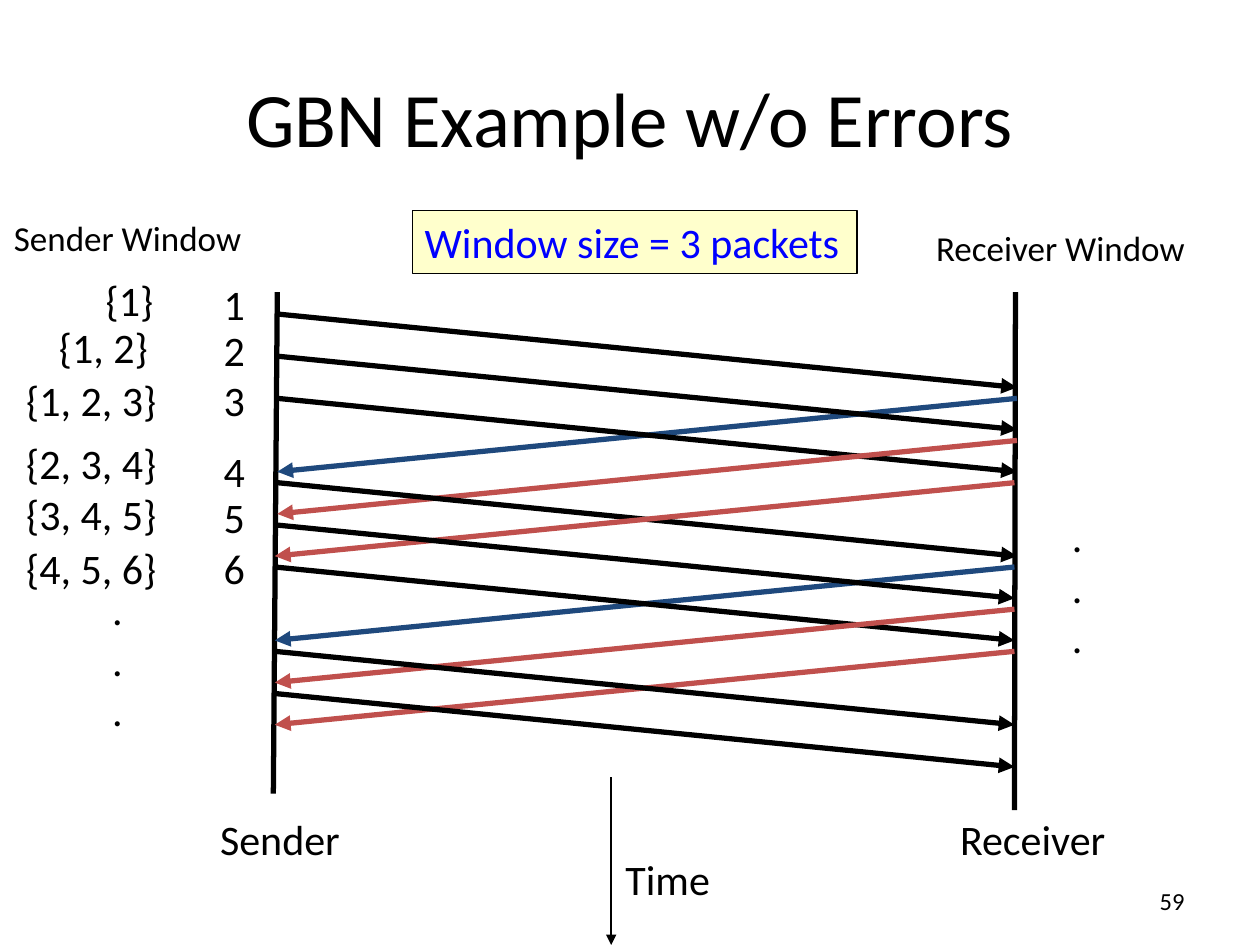
from lxml import etree
from pptx import Presentation
from pptx.dml.color import RGBColor
from pptx.enum import shapes, text
from pptx.oxml import ns
from pptx.util import Cm, Pt

BLACK, ACK_BLUE, ACK_RED = "000000", "1F497D", "C0504D"


def add_label(left, top, width, height, content, size=24, color=BLACK,
              align=text.PP_ALIGN.LEFT, inset=0.25):
    label = slide.shapes.add_textbox(Cm(left), Cm(top), Cm(width), Cm(height))
    frame = label.text_frame
    frame.text = content
    frame.word_wrap = False
    frame.vertical_anchor = text.MSO_ANCHOR.MIDDLE
    frame.margin_left = frame.margin_right = Cm(inset)
    frame.margin_top = frame.margin_bottom = Cm(inset / 2)
    for paragraph in frame.paragraphs:
        paragraph.alignment = align
        paragraph.font.name = "Calibri"
        paragraph.font.size = Pt(size)
        paragraph.font.color.rgb = RGBColor.from_string(color)
    return label


def add_line(x1, y1, x2, y2, color=BLACK, width=3, arrow=True):
    line = slide.shapes.add_connector(
        shapes.MSO_CONNECTOR.STRAIGHT, Cm(x1), Cm(y1), Cm(x2), Cm(y2))
    line.line.color.rgb = RGBColor.from_string(color)
    line.line.width = Pt(width)
    if arrow:
        etree.SubElement(line.line._get_or_add_ln(), ns.qn("a:tailEnd"), type="triangle")
    etree.SubElement(line._element.spPr, ns.qn("a:effectLst"))


presentation = Presentation()
presentation.slide_width, presentation.slide_height = Cm(25.4), Cm(19.05)
slide = presentation.slides.add_slide(presentation.slide_layouts[5])

# Title
title = slide.shapes.title
title.left, title.top, title.width, title.height = Cm(1.27), Cm(0.76), Cm(22.86), Cm(3.18)
title.text_frame.text = "GBN Example w/o Errors"
title.text_frame.vertical_anchor = text.MSO_ANCHOR.MIDDLE
paragraph = title.text_frame.paragraphs[0]
paragraph.alignment = text.PP_ALIGN.CENTER
paragraph.font.name = "Calibri"
paragraph.font.size = Pt(44)
paragraph.font.color.rgb = RGBColor.from_string(BLACK)

# Time axis
add_line(12.32, 15.67, 12.32, 19.05, width=1)
add_label(12.34, 17.07, 2.24, 1.27, "Time", align=text.PP_ALIGN.CENTER)

# Window size box
window_size = add_label(8.31, 4.24, 8.97, 1.27, "Window size = 3 packets", color="0000FF")
window_size.fill.solid()
window_size.fill.fore_color.rgb = RGBColor.from_string("FFFFCC")
window_size.line.color.rgb = RGBColor.from_string(BLACK)
window_size.line.width = Pt(0.75)

# Sender and receiver timelines
add_line(5.59, 5.89, 5.51, 16, arrow=False)
add_line(20.47, 5.89, 20.45, 16.33, arrow=False)
add_label(4.17, 16.28, 2.95, 1.27, "Sender", align=text.PP_ALIGN.CENTER)
add_label(19.08, 16.28, 3.48, 1.27, "Receiver", align=text.PP_ALIGN.CENTER)
add_label(0.03, 4.24, 5.13, 1.09, "Sender Window", size=20)
add_label(18.62, 4.45, 5.56, 1.09, "Receiver Window", size=20)

# Messages in drawing order: time slot and colour; black packets go right, acks go left
messages = [
    (0, BLACK), (2, ACK_BLUE), (1, BLACK), (2, BLACK), (3, ACK_RED), (4, BLACK),
    (4, ACK_RED), (6, ACK_BLUE), (5, BLACK), (6, BLACK), (7, ACK_RED), (8, ACK_RED),
    (8, BLACK), (9, BLACK),
]
first_slot, slot_height, travel = 6.33, 0.85, 1.48
for index, (slot, color) in enumerate(messages):
    sender, receiver = (5.59, 20.5) if index < 6 else (5.54, 20.45)
    start, end = (sender, receiver) if color == BLACK else (receiver, sender)
    y = first_slot + slot * slot_height
    add_line(start, y, end, y + travel, color)

# Packet numbers with the sender window at each step: window left, width, top, number top
steps = [
    ("{1}", 1.88, 1.5, 5.41, 5.51),
    ("{1, 2}", 0.94, 2.31, 6.35, 6.43),
    ("{1, 2, 3}", 0.28, 3.18, 7.42, 7.44),
    ("{2, 3, 4}", 0.28, 3.18, 8.69, 8.86),
    ("{3, 4, 5}", 0.28, 3.18, 9.73, 9.8),
    ("{4, 5, 6}", 0.28, 3.18, 10.8, 10.82),
]
for number, (window, left, width, top, number_top) in enumerate(steps, start=1):
    add_label(4.28, number_top, 0.89, 1.24, str(number), inset=0.23)
    add_label(left, top, width, 1.27, window)

# Continuation dots
for left, top in [(2.01, 11.63), (21.36, 10.16)]:
    add_label(left, top, 0.71, 3.33, "\n".join("..."))

# Slide number
add_label(18.21, 17.65, 5.92, 1.02, "59", size=14, align=text.PP_ALIGN.RIGHT).text_frame.word_wrap = True

presentation.save("out.pptx")
